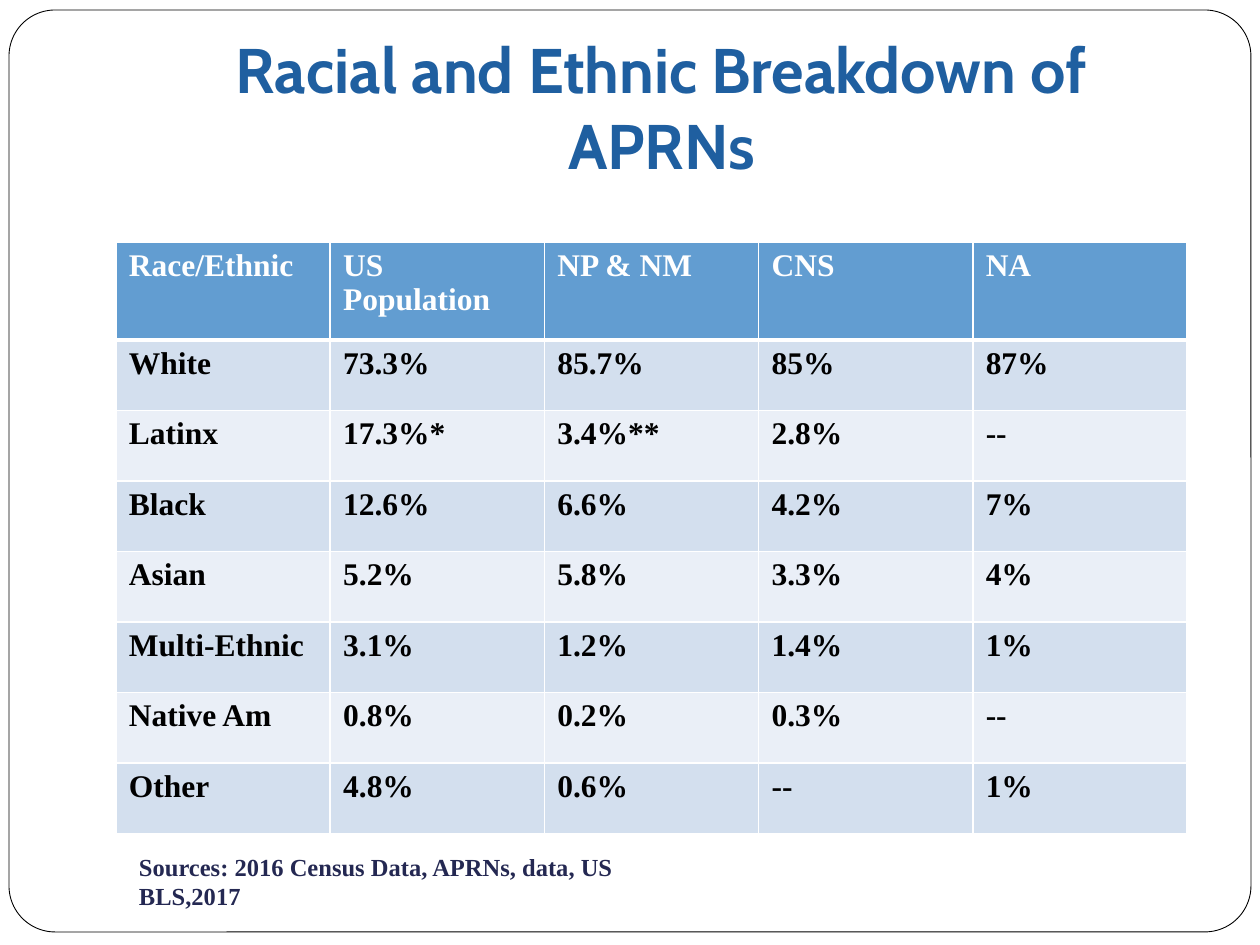
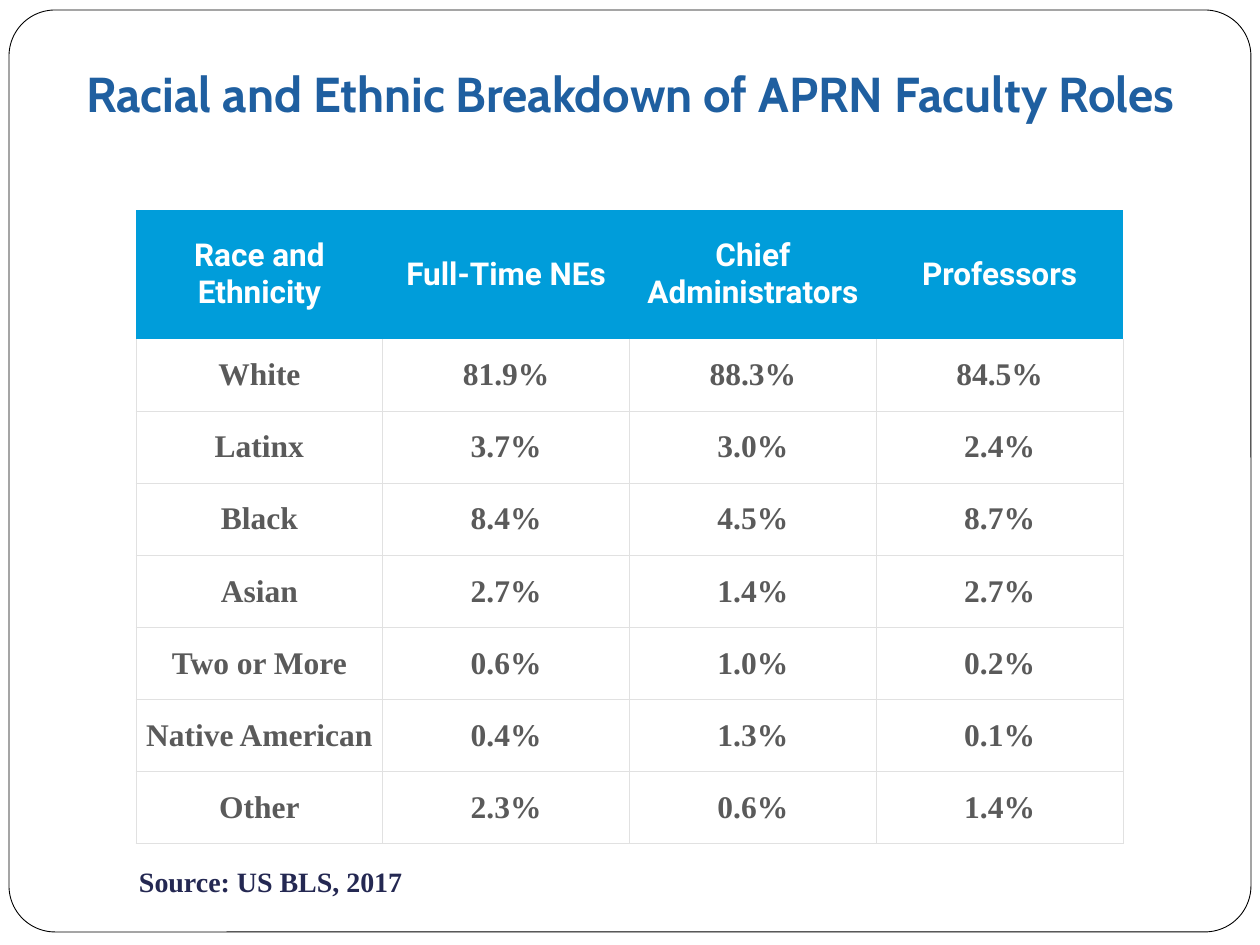
from lxml import etree
from pptx import Presentation
from pptx.dml.color import RGBColor
from pptx.enum.shapes import MSO_SHAPE
from pptx.enum.text import MSO_ANCHOR, MSO_AUTO_SIZE, PP_ALIGN
from pptx.oxml.ns import qn
from pptx.util import Emu, Pt

PX = 914400 / 126  # EMU in one px

WHITE = RGBColor(0xFF, 0xFF, 0xFF)
BLACK = RGBColor(0x00, 0x00, 0x00)
TITLE_BLUE = RGBColor(0x1F, 0x5F, 0xA0)
NAVY = RGBColor(0x24, 0x28, 0x52)
STEEL = RGBColor(0x62, 0x9D, 0xD1)
BAND_DARK = RGBColor(0xD3, 0xDF, 0xEE)
BAND_LIGHT = RGBColor(0xEA, 0xEF, 0xF7)
CYAN = RGBColor(0x00, 0x9D, 0xDA)
GREY = RGBColor(0x5A, 0x5A, 0x5A)
RULE_GREY = RGBColor(0xE1, 0xE1, 0xE1)

SERIF = "Times New Roman"
NO_STYLE = "{2D5ABB26-0587-4C30-8999-92F81FD0307C}"


def px(*lengths):
    return [Emu(round(n * PX)) for n in lengths]


def write(tf, text, font, size, color, align, anchor, margins):
    """Fill a text frame or table cell with one bold paragraph."""
    sides = ("margin_left", "margin_top", "margin_right", "margin_bottom")
    fmt = dict(zip(sides, px(*margins)), vertical_anchor=anchor)
    for name, value in fmt.items():
        setattr(tf, name, value)
    p = getattr(tf, "text_frame", tf).paragraphs[0]
    p.alignment = align
    r = p.add_run()
    r.text = text
    for name, value in dict(name=font, size=Pt(size), bold=True).items():
        setattr(r.font, name, value)
    r.font.color.rgb = color


# What each slide holds; boxes are left, top, width, height
slides = [
    dict(
        title="Racial and Ethnic Breakdown of APRNs",
        title_box=(126, 38, 1071, 157), title_size=36, title_bottom=13,
        table_box=(116, 242, 1071, 592), header_height=98,
        header_font=SERIF, header_fill=STEEL, bands=(BAND_DARK, BAND_LIGHT),
        text_color=BLACK, align=PP_ALIGN.LEFT, anchor=MSO_ANCHOR.TOP,
        margins=(13, 6, 13, 6),
        header_lines=dict(L=1, R=1, T=1, B=3), body_lines=dict(L=1, R=1, B=1),
        line_color=WHITE,
        rows=[
            ("Race/Ethnic", "US Population", "NP & NM", "CNS", "NA"),
            ("White", "73.3%", "85.7%", "85%", "87%"),
            ("Latinx", "17.3%*", "3.4%**", "2.8%", "--"),
            ("Black", "12.6%", "6.6%", "4.2%", "7%"),
            ("Asian", "5.2%", "5.8%", "3.3%", "4%"),
            ("Multi-Ethnic", "3.1%", "1.2%", "1.4%", "1%"),
            ("Native Am", "0.8%", "0.2%", "0.3%", "--"),
            ("Other", "4.8%", "0.6%", "--", "1%"),
        ],
        source="Sources: 2016 Census Data, APRNs, data, US BLS,2017",
        source_box=(126, 850, 588, 63), source_size=14,
    ),
    dict(
        title="Racial and Ethnic Breakdown of APRN Faculty Roles",
        title_box=(63, 0, 1134, 195), title_size=28, title_bottom=73,
        table_box=(136, 210, 987, 634), header_height=129,
        header_font="Roboto", header_fill=CYAN, bands=(None, None),
        text_color=GREY, align=PP_ALIGN.CENTER, anchor=MSO_ANCHOR.MIDDLE,
        margins=(5, 5, 5, 5),
        header_lines={}, body_lines=dict(L=0.6, R=0.6, B=0.6),
        line_color=RULE_GREY,
        rows=[
            ("Race and Ethnicity", "Full-Time NEs", "Chief Administrators", "Professors"),
            ("White", "81.9%", "88.3%", "84.5%"),
            ("Latinx", "3.7%", "3.0%", "2.4%"),
            ("Black", "8.4%", "4.5%", "8.7%"),
            ("Asian", "2.7%", "1.4%", "2.7%"),
            ("Two or More", "0.6%", "1.0%", "0.2%"),
            ("Native American", "0.4%", "1.3%", "0.1%"),
            ("Other", "2.3%", "0.6%", "1.4%"),
        ],
        source="Source: US BLS, 2017",
        source_box=(126, 850, 598, 63), source_size=16,
    ),
]

prs = Presentation()
prs.slide_width, prs.slide_height = px(1260, 945)
layout = prs.slide_layouts[5]

for i, d in enumerate(slides):
    s = prs.slides.add_slide(layout)

    # Rounded frame, moved to the layout so that both slides share it
    if i == 0:
        frame = s.shapes.add_shape(MSO_SHAPE.ROUNDED_RECTANGLE, *px(9, 10, 1242, 922))
        frame.adjustments[0] = 0.05
        frame.shadow.inherit = False
        frame.fill.solid()
        frame.fill.fore_color.rgb = WHITE
        frame.line.color.rgb = BLACK
        frame.line.width = Pt(0.5)
        layout.shapes._spTree.insert(2, frame._element)

    # Title
    title = s.shapes.title
    title.left, title.top, title.width, title.height = px(*d["title_box"])
    tf = title.text_frame
    tf.word_wrap = True
    tf.auto_size = MSO_AUTO_SIZE.NONE
    write(tf, d["title"], "Cabin", d["title_size"], TITLE_BLUE,
          PP_ALIGN.CENTER, MSO_ANCHOR.BOTTOM, (13, 6, 13, d["title_bottom"]))

    # Table grid: one header row, then equal rows and columns
    rows = d["rows"]
    width, height = d["table_box"][2:]
    tbl = s.shapes.add_table(len(rows), len(rows[0]), *px(*d["table_box"])).table
    tbl._tbl.tblPr.find(qn("a:tableStyleId")).text = NO_STYLE
    for col in tbl.columns:
        col.width, = px(width / len(rows[0]))
    for row in tbl.rows:
        row.height, = px((height - d["header_height"]) / (len(rows) - 1))
    tbl.rows[0].height, = px(d["header_height"])

    # Table cells
    for y, values in enumerate(rows):
        header = y == 0
        font = d["header_font"] if header else SERIF
        color = WHITE if header else d["text_color"]
        fill = d["header_fill"] if header else d["bands"][(y - 1) % 2]
        lines = d["header_lines"] if header else d["body_lines"]
        for x, value in enumerate(values):
            cell = tbl.cell(y, x)
            write(cell, value, font, 18, color, d["align"], d["anchor"], d["margins"])
            tcPr = cell._tc.get_or_add_tcPr()
            for side, weight in lines.items():
                ln = etree.SubElement(tcPr, qn(f"a:ln{side}"), w=str(Pt(weight)))
                solid = etree.SubElement(ln, qn("a:solidFill"))
                etree.SubElement(solid, qn("a:srgbClr"), val=str(d["line_color"]))
            if fill is None:
                cell.fill.background()
            else:
                cell.fill.solid()
                cell.fill.fore_color.rgb = fill

    # Source note
    tf = s.shapes.add_textbox(*px(*d["source_box"])).text_frame
    tf.word_wrap = True
    write(tf, d["source"], SERIF, d["source_size"], NAVY,
          PP_ALIGN.LEFT, MSO_ANCHOR.MIDDLE, (13, 6, 13, 6))

prs.save("out.pptx")
